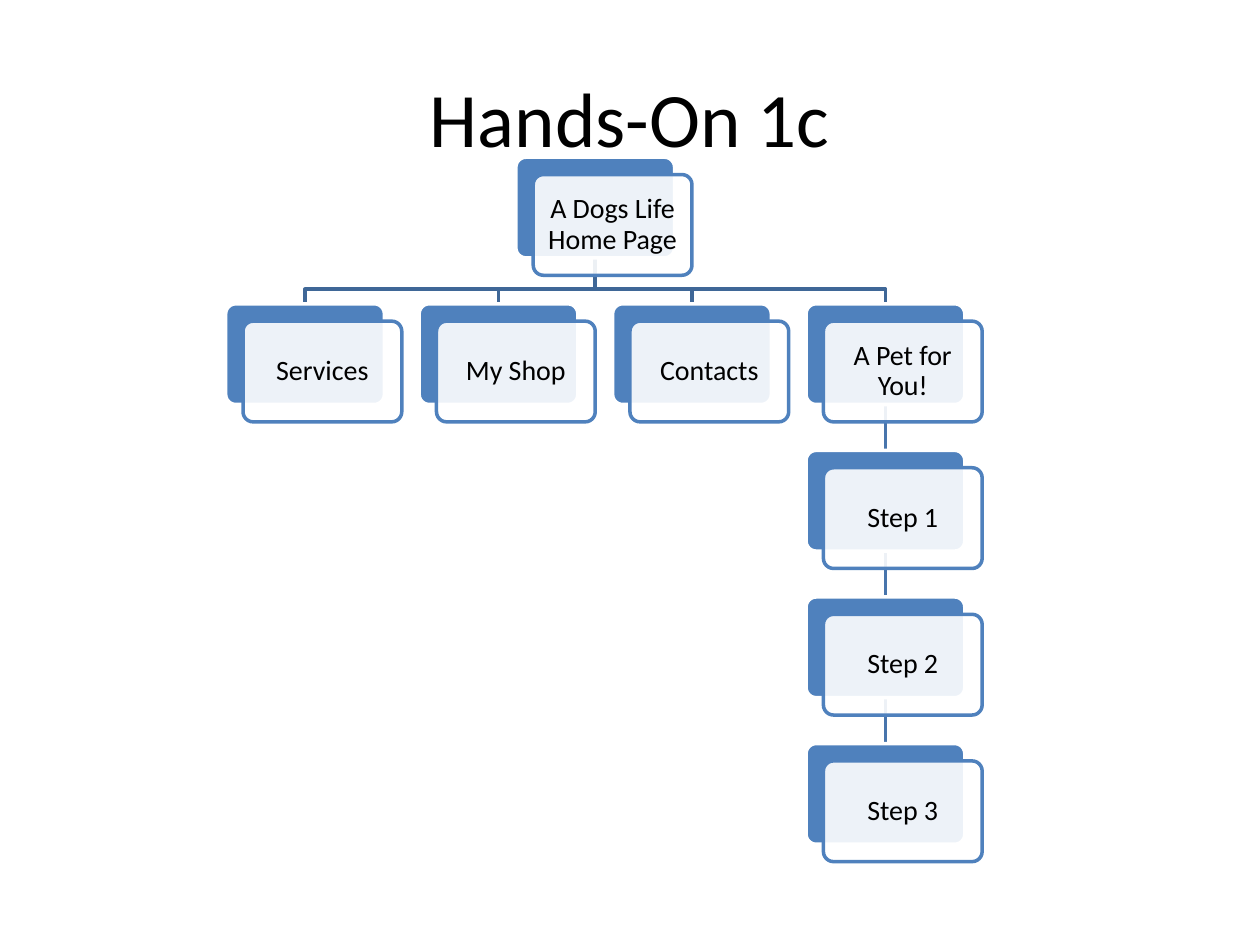
"""Build a one-page site map: a home page, four sections and three steps."""
from lxml.etree import SubElement
from pptx import Presentation
from pptx.dml.color import RGBColor
from pptx.enum.shapes import MSO_CONNECTOR as Link, MSO_SHAPE as Shape
from pptx.enum.text import MSO_ANCHOR as Anchor, PP_ALIGN as Align
from pptx.oxml.ns import qn
from pptx.util import Cm, Pt

TITLE = "Hands-On 1c"
HOME = ("A Dogs Life Home Page", 1.5, 0)
SECTIONS = [(name, column, 1) for column, name in
            enumerate(["Services", "My Shop", "Contacts", "A Pet for You!"])]
STEPS = [(name, 3, row) for row, name in
         enumerate(["Step 1", "Step 2", "Step 3"], start=2)]

FONT = "Calibri"
BLUE, WHITE, BLACK = "4F81BD", "FFFFFF", "000000"
BRANCH, CHAIN = "3F6797", "4875AC"
LEFT, TOP = 4.55, 3.17
COLUMN_PITCH, ROW_PITCH = 3.9, 2.955
WIDTH, HEIGHT, OFFSET = 3.2, 2.03, 0.35
BEND = 0.63


def color(value):
    return RGBColor.from_string(value)


def corner(column, row):
    return LEFT + column * COLUMN_PITCH, TOP + row * ROW_PITCH


def set_line(shape, value):
    shape.line.color.rgb = color(value)
    shape.line.width = Pt(2)


def write(shape, text, size, margin):
    frame = shape.text_frame
    frame.text = text
    frame.word_wrap = True
    frame.vertical_anchor = Anchor.MIDDLE
    frame.margin_left = frame.margin_right = Cm(margin)
    frame.margin_top = frame.margin_bottom = Cm(margin)
    para = frame.paragraphs[0]
    para.alignment = Align.CENTER
    font = para.runs[0].font
    font.name, font.size = FONT, Pt(size)
    font.color.rgb = color(BLACK)
    return para


def add_branch(page, column):
    home_x, home_y = corner(*HOME[1:])
    section_x, section_y = corner(column, 1)
    start_x, end_x = home_x + WIDTH / 2, section_x + WIDTH / 2
    start_y = home_y + HEIGHT
    bend_y = start_y + BEND
    builder = page.shapes.build_freeform(Cm(start_x), Cm(start_y))
    points = [(start_x, bend_y), (end_x, bend_y), (end_x, section_y)]
    builder.add_line_segments([(Cm(x), Cm(y)) for x, y in points], close=False)
    branch = builder.convert_to_shape()
    branch.shadow.inherit = False
    branch.fill.background()
    set_line(branch, BRANCH)


def add_card(page, x, y, fill, line):
    card = page.shapes.add_shape(
        Shape.ROUNDED_RECTANGLE, Cm(x), Cm(y), Cm(WIDTH), Cm(HEIGHT))
    card.adjustments[0] = 0.1
    card.shadow.inherit = False
    card.fill.solid()
    card.fill.fore_color.rgb = color(fill)
    set_line(card, line)
    return card


def add_node(page, text, column, row):
    x, y = corner(column, row)
    back = add_card(page, x, y, BLUE, WHITE)
    front = add_card(page, x + OFFSET, y + OFFSET, WHITE, BLUE)
    fill = front.element.spPr.find(qn("a:solidFill"))
    SubElement(fill[0], qn("a:alpha"), val="90000")
    write(front, text, 16, 0.18).line_spacing = 0.9
    return back


def add_link(page, upper, lower):
    link = page.shapes.add_connector(Link.STRAIGHT, 0, 0, 0, 0)
    link.begin_connect(upper, 2)
    link.end_connect(lower, 0)
    set_line(link, CHAIN)
    SubElement(link.element.spPr, qn("a:effectLst"))
    link.element.getparent().insert(2, link.element)


def main():
    deck = Presentation()
    deck.slide_width, deck.slide_height = Cm(25.4), Cm(19.05)
    page = deck.slides.add_slide(deck.slide_layouts[6])
    title = page.shapes.add_textbox(Cm(1.27), Cm(0.76), Cm(22.86), Cm(3.18))
    write(title, TITLE, 44, 0.2)

    for name, column, row in reversed(SECTIONS):
        add_branch(page, column)
    nodes = [add_node(page, *node) for node in [HOME, *SECTIONS, *STEPS]]
    chain = nodes[len(SECTIONS):]
    for upper, lower in zip(chain, chain[1:]):
        add_link(page, upper, lower)
    deck.save("out.pptx")


if __name__ == "__main__":
    main()
